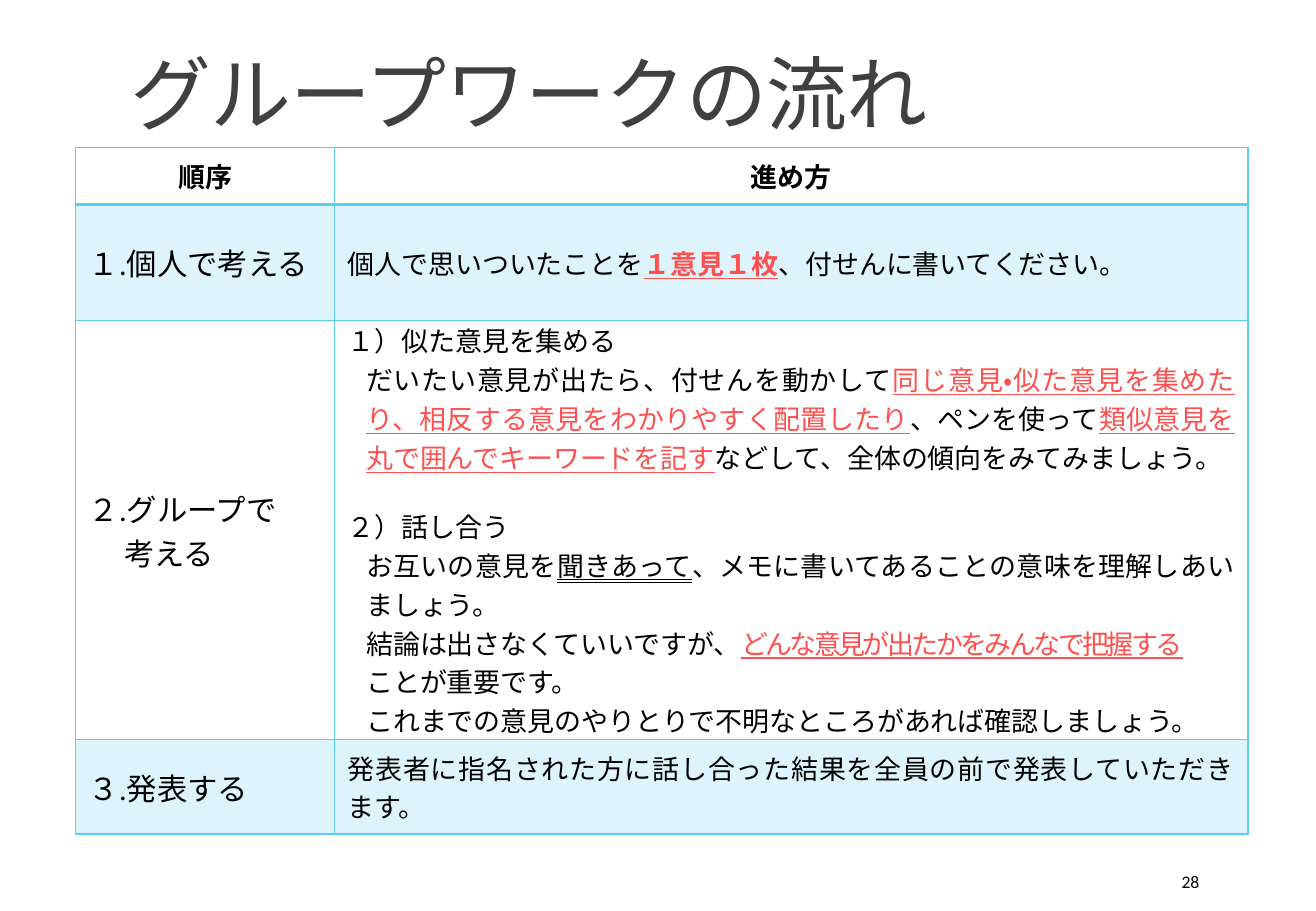
from dataclasses import dataclass, field

from lxml import etree
from pptx import Presentation
from pptx.dml.color import RGBColor
from pptx.enum import lang, text
from pptx.oxml import ns
from pptx.util import Pt


@dataclass(frozen=True)
class Theme:
    font: str = "Calibri"
    title_color: str = "404040"
    ink: str = "000000"
    accent: str = "FF5050"
    line: str = "5ECCF3"
    band_opacity: int = 20
    title_size: float = 48
    step_size: float = 18
    body_size: float = 16
    number_size: float = 10.5


THEME = Theme()


@dataclass(frozen=True)
class Span:
    words: str
    color: str | None = None
    bold: bool = False
    underline: text.MSO_UNDERLINE | None = None
    spacing: float = 0


@dataclass(frozen=True)
class Para:
    spans: list[Span]
    size: float = THEME.body_size
    align: text.PP_ALIGN = text.PP_ALIGN.JUSTIFY
    bold: bool = False
    color: str = THEME.ink
    margin: float = 0
    indent: float = 0
    before: float = 0
    line_spacing: float | None = None


@dataclass(frozen=True)
class Row:
    height: float
    step: list[Para]
    method: list[Para]
    shaded: bool = False
    bottom_line: float = field(default=1)


def step(words: str, margin: float = 0) -> Para:
    return Para([Span(words)], THEME.step_size, margin=margin)


def header(words: str) -> Para:
    return Para([Span(words)], align=text.PP_ALIGN.CENTER, bold=True)


def heading(words: str, before: float = 0) -> Para:
    return Para([Span(words)], margin=11, indent=-11, before=before)


def body(*spans: Span) -> Para:
    return Para(list(spans), margin=11)


def marked(words: str, bold: bool = False, spacing: float = 0) -> Span:
    return Span(words, THEME.accent, bold, text.MSO_UNDERLINE.SINGLE_LINE, spacing)


ROWS = [
    Row(34, [header("順序")], [header("進め方")], bottom_line=2),
    Row(68.5, [step("１.個人で考える")],
        [Para([Span("個人で思いついたことを"), marked("１意見１枚", bold=True),
               Span("、付せんに書いてください。")])], shaded=True),
    Row(239, [step("２.グループで"), step("考える", margin=21)], [
        heading("１）似た意見を集める"),
        body(Span("だいたい意見が出たら、付せんを動かして"),
             marked("同じ意見・似た意見を集めたり、相反する意見をわかりやすく配置したり"),
             Span("、ペンを使って"),
             marked("類似意見を丸で囲んでキーワードを記す"),
             Span("などして、全体の傾向をみてみましょう。")),
        heading("２）話し合う", before=18),
        body(Span("お互いの意見を"),
             Span("聞きあって", underline=text.MSO_UNDERLINE.DOUBLE_LINE),
             Span("、メモに書いてあることの意味を理解しあいましょう。")),
        body(Span("結論は出さなくていいですが、"),
             marked("どんな意見が出たかをみんなで把握する", spacing=-1.5)),
        body(Span("ことが重要です。")),
        body(Span("これまでの意見のやりとりで不明なところがあれば確認しましょう。")),
    ]),
    Row(56, [step("３.発表する")],
        [Para([Span("発表者に指名された方に話し合った結果を全員の前で発表していただきます。")])],
        shaded=True),
]


def write(frame, paras: list[Para]) -> None:
    for index, item in enumerate(paras):
        para = frame.paragraphs[0] if index == 0 else frame.add_paragraph()
        para.alignment = item.align
        if item.line_spacing:
            para.line_spacing = item.line_spacing
        if item.before:
            para.space_before = Pt(item.before)
        properties = para._p.get_or_add_pPr()
        properties.set("marL", str(Pt(item.margin)))
        properties.set("indent", str(Pt(item.indent)))
        para.font.name = THEME.font
        para.font.size = Pt(item.size)
        para.font.bold = item.bold
        para.font.color.rgb = RGBColor.from_string(item.color)
        for part in item.spans:
            span = para.add_run()
            span.text = part.words
            span.font.language_id = lang.MSO_LANGUAGE_ID.JAPANESE
            if part.color:
                span.font.color.rgb = RGBColor.from_string(part.color)
            if part.bold:
                span.font.bold = True
            if part.underline:
                span.font.underline = part.underline
            if part.spacing:
                span._r.get_or_add_rPr().set("spc", str(round(part.spacing * 100)))


def shade(cell) -> None:
    """Fill a cell with the translucent line colour."""
    cell.fill.solid()
    cell.fill.fore_color.rgb = RGBColor.from_string(THEME.line)
    color = cell._tc.tcPr.find(".//" + ns.qn("a:srgbClr"))
    etree.SubElement(color, ns.qn("a:alpha"), val=str(THEME.band_opacity * 1000))


def draw_borders(cell, top: float, bottom: float) -> None:
    properties = cell._tc.get_or_add_tcPr()
    widths = {"lnL": 1, "lnR": 1, "lnT": top, "lnB": bottom}
    for index, (side, width) in enumerate(widths.items()):
        line = etree.Element(ns.qn(f"a:{side}"), w=str(Pt(width)))
        fill = etree.SubElement(line, ns.qn("a:solidFill"))
        etree.SubElement(fill, ns.qn("a:srgbClr"), val=THEME.line)
        properties.insert(index, line)


def add_flow_table(page) -> None:
    widths = (153.5, 541.5)
    shape = page.shapes.add_table(len(ROWS), len(widths), Pt(44.8), Pt(87.4),
                                  Pt(sum(widths)), Pt(sum(row.height for row in ROWS)))
    table = shape.table
    table.first_row = table.horz_banding = False
    for column, width in zip(table.columns, widths):
        column.width = Pt(width)
    top = 1
    for index, row in enumerate(ROWS):
        table.rows[index].height = Pt(row.height)
        for cell, paras in zip(table.rows[index].cells, (row.step, row.method)):
            cell.margin_left = cell.margin_right = Pt(7.8)
            cell.margin_top = cell.margin_bottom = 0
            cell.vertical_anchor = text.MSO_ANCHOR.MIDDLE
            if row.shaded:
                shade(cell)
            else:
                cell.fill.background()
            draw_borders(cell, top, row.bottom_line)
            write(cell.text_frame, paras)
        top = row.bottom_line


def main() -> None:
    deck = Presentation()
    deck.slide_width, deck.slide_height = Pt(780), Pt(540)
    page = deck.slides.add_slide(deck.slide_layouts[5])

    title = page.shapes.title
    title.left, title.top, title.width, title.height = Pt(70), Pt(22), Pt(644), Pt(65)
    title.text_frame.vertical_anchor = text.MSO_ANCHOR.BOTTOM
    write(title.text_frame, [Para([Span("グループワークの流れ", spacing=-0.5)], THEME.title_size,
                                  text.PP_ALIGN.LEFT, color=THEME.title_color,
                                  line_spacing=0.85)])
    add_flow_table(page)

    number = page.shapes.add_textbox(Pt(633.5), Pt(508), Pt(84.5), Pt(29)).text_frame
    number.word_wrap = True
    number.vertical_anchor = text.MSO_ANCHOR.MIDDLE
    write(number, [Para([Span("28")], THEME.number_size, text.PP_ALIGN.RIGHT)])
    deck.save("out.pptx")


if __name__ == "__main__":
    main()
